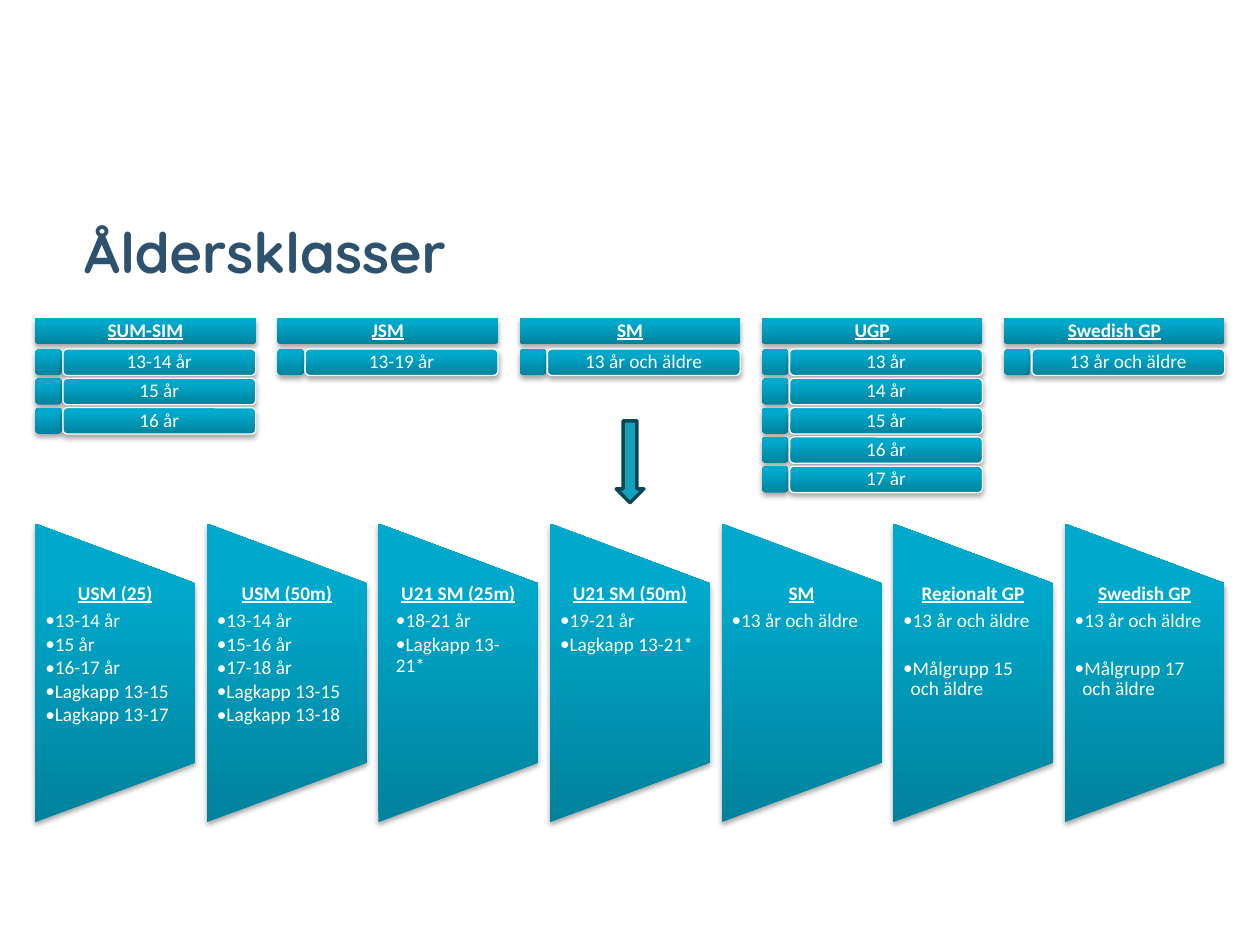
from lxml import etree
from pptx import Presentation
from pptx.dml.color import RGBColor
from pptx.enum.shapes import MSO_SHAPE
from pptx.enum.text import MSO_ANCHOR, PP_ALIGN
from pptx.oxml import parse_xml
from pptx.oxml.ns import nsdecls, qn
from pptx.util import Inches, Pt

ROUNDED = MSO_SHAPE.ROUNDED_RECTANGLE
TRAPEZOID = MSO_SHAPE.FLOWCHART_MANUAL_OPERATION
DOWN_ARROW = MSO_SHAPE.DOWN_ARROW
MIDDLE, TOP = MSO_ANCHOR.MIDDLE, MSO_ANCHOR.TOP
CENTER, LEFT = PP_ALIGN.CENTER, PP_ALIGN.LEFT

NAVY = RGBColor(0x2E, 0x51, 0x6D)
WHITE = RGBColor(0xFF, 0xFF, 0xFF)
ARROW_FILL = RGBColor(0x14, 0xA1, 0xBE)
ARROW_LINE = RGBColor(0x09, 0x47, 0x53)
TEAL_STOPS = [
    (0, RGBColor(0x00, 0x82, 0x9D)),
    (80, RGBColor(0x00, 0xA9, 0xCB)),
    (100, RGBColor(0x00, 0xAA, 0xCC)),
]

BODY_FONT, BODY_SIZE = "Calibri", 11
LEFT_EDGE, RIGHT_EDGE = 0.28, 9.72
COLUMN_WIDTH, BAR_HEIGHT = 1.75, 0.21
HEADER_TOP, FIRST_ROW_TOP, ROW_PITCH = 2.52, 2.77, 0.93 / 4
PILL_OFFSET = 0.22
PANEL_WIDTH, PANEL_HEIGHT, PANEL_MIDDLE = 1.27, 2.37, 5.34
HANGING = 0.06

COLUMNS = [
    ("SUM-SIM", ["13-14 år", "15 år", "16 år"]),
    ("JSM", ["13-19 år"]),
    ("SM", ["13 år och äldre"]),
    ("UGP", ["13 år", "14 år", "15 år", "16 år", "17 år"]),
    ("Swedish GP", ["13 år och äldre"]),
]
# heading, bullets, first-line indent, space before the last bullet
PANELS = [
    ("USM (25)", ["13-14 år", "15 år", "16-17 år", "Lagkapp 13-15", "Lagkapp 13-17"], -HANGING, 0),
    ("USM (50m)", ["13-14 år", "15-16 år", "17-18 år", "Lagkapp 13-15", "Lagkapp 13-18"], -HANGING, 0),
    ("U21 SM (25m)", ["18-21 år", "Lagkapp 13-21*"], 0, 0),
    ("U21 SM (50m)", ["19-21 år", "Lagkapp 13-21*"], -HANGING, 0),
    ("SM", ["13 år och äldre"], -HANGING, 0),
    ("Regionalt GP", ["13 år och äldre", "Målgrupp 15 och äldre"], -HANGING, 13.7),
    ("Swedish GP", ["13 år och äldre", "Målgrupp 17 och äldre"], -HANGING, 13.7),
]


def spread(count, width):
    """Left positions of equal columns that fill the page between its edges."""
    pitch = (RIGHT_EDGE - LEFT_EDGE - width) / (count - 1)
    return [LEFT_EDGE + index * pitch for index in range(count)]


def style_text(para, size=BODY_SIZE, font=BODY_FONT, color=WHITE, bold=False, underline=False):
    for span in para.runs:
        span.font.name = font
        span.font.size = Pt(size)
        span.font.color.rgb = color
        span.font.bold = bold
        span.font.underline = underline


def set_frame(frame, anchor, side=0.0):
    frame.word_wrap = True
    frame.vertical_anchor = anchor
    frame.margin_left = frame.margin_right = Inches(side)
    frame.margin_top = frame.margin_bottom = 0


def add_teal_shape(shapes, kind, left, top, width, height, outlined=False):
    """Add a shape with the upright teal gradient and a soft shadow below."""
    shape = shapes.add_shape(kind, Inches(left), Inches(top), Inches(width), Inches(height))
    stops = "".join(
        f'<a:gs pos="{position * 1000}"><a:srgbClr val="{color}"/></a:gs>'
        for position, color in TEAL_STOPS
    )
    properties = shape._element.spPr
    properties.append(parse_xml(
        f'<a:gradFill {nsdecls("a")} rotWithShape="0"><a:gsLst>{stops}</a:gsLst>'
        '<a:lin ang="16200000" scaled="0"/></a:gradFill>'
    ))
    if outlined:
        shape.line.color.rgb = WHITE
        shape.line.width = Pt(0.75)
    else:
        shape.line.fill.background()
    properties.append(parse_xml(
        f'<a:effectLst {nsdecls("a")}><a:outerShdw blurRad="{Pt(3.1)}" dist="{Pt(1.8)}" '
        'dir="5400000" rotWithShape="0"><a:srgbClr val="000000"><a:alpha val="35000"/>'
        '</a:srgbClr></a:outerShdw></a:effectLst>'
    ))
    return shape


def add_bar(shapes, text, left, top, width, header=False):
    bar = add_teal_shape(shapes, ROUNDED, left, top, width, BAR_HEIGHT, outlined=not header)
    if header:
        bar.adjustments[0] = 0.1
    frame = bar.text_frame
    set_frame(frame, MIDDLE)
    frame.text = text
    para = frame.paragraphs[0]
    para.alignment = CENTER
    para.line_spacing = 0.9
    style_text(para, bold=header, underline=header)


def add_column(shapes, left, heading, ages):
    add_bar(shapes, heading, left, HEADER_TOP, COLUMN_WIDTH, header=True)
    for row, age in enumerate(ages):
        top = FIRST_ROW_TOP + row * ROW_PITCH
        add_teal_shape(shapes, ROUNDED, left, top, BAR_HEIGHT, BAR_HEIGHT)
        add_bar(shapes, age, left + PILL_OFFSET, top, COLUMN_WIDTH - PILL_OFFSET)


def add_bullet(frame, text, indent):
    para = frame.add_paragraph()
    para.text = text
    para.level = 1
    properties = para._p.get_or_add_pPr()
    properties.set("marL", str(Inches(HANGING)))
    properties.set("indent", str(Inches(indent)))
    etree.SubElement(properties, qn("a:buFont")).set("typeface", BODY_FONT)
    etree.SubElement(properties, qn("a:buChar")).set("char", "•")
    para.font.size = Pt(BODY_SIZE)
    para.alignment = LEFT
    para.line_spacing = 0.9
    para.space_after = Pt(1.6)
    style_text(para)
    # The bullet takes its size from the paragraph end mark.
    etree.SubElement(para._p, qn("a:endParaRPr")).set("sz", str(BODY_SIZE * 100))
    return para


def add_panel(shapes, left, heading, bullets, indent, last_gap):
    trapezoid = add_teal_shape(
        shapes, TRAPEZOID,
        left + (PANEL_WIDTH - PANEL_HEIGHT) / 2, PANEL_MIDDLE - PANEL_WIDTH / 2,
        PANEL_HEIGHT, PANEL_WIDTH,
    )
    trapezoid.rotation = 270
    box = shapes.add_textbox(Inches(left), Inches(4.63), Inches(PANEL_WIDTH), Inches(1.42))
    frame = box.text_frame
    set_frame(frame, TOP, side=0.08)
    frame.text = heading
    para = frame.paragraphs[0]
    para.alignment = CENTER
    para.line_spacing = 0.9
    para.space_after = Pt(3.9)
    style_text(para, bold=True, underline=True)
    for bullet in bullets:
        para = add_bullet(frame, bullet, indent)
    if last_gap:
        para.space_before = Pt(last_gap)


def add_title(shapes, text):
    box = shapes.add_textbox(Inches(0.57), Inches(1.25), Inches(9), Inches(1.48))
    set_frame(box.text_frame, MIDDLE, side=0.1)
    box.text_frame.text = text
    style_text(box.text_frame.paragraphs[0], 32, "Quicksand", NAVY, bold=True)


def add_down_arrow(shapes):
    arrow = shapes.add_shape(DOWN_ARROW, Inches(4.89), Inches(3.34), Inches(0.22), Inches(0.65))
    arrow.shadow.inherit = False
    arrow.fill.solid()
    arrow.fill.fore_color.rgb = ARROW_FILL
    arrow.line.color.rgb = ARROW_LINE
    arrow.line.width = Pt(2)


def main():
    deck = Presentation()
    deck.slide_width, deck.slide_height = Inches(10), Inches(7.5)
    page = deck.slides.add_slide(deck.slide_layouts[6])
    add_title(page.shapes, "Åldersklasser")
    columns = page.shapes.add_group_shape()
    for left, column in zip(spread(len(COLUMNS), COLUMN_WIDTH), COLUMNS):
        add_column(columns.shapes, left, *column)
    add_down_arrow(page.shapes)
    panels = page.shapes.add_group_shape()
    for left, panel in zip(spread(len(PANELS), PANEL_WIDTH), PANELS):
        add_panel(panels.shapes, left, *panel)
    deck.save("out.pptx")


if __name__ == "__main__":
    main()
